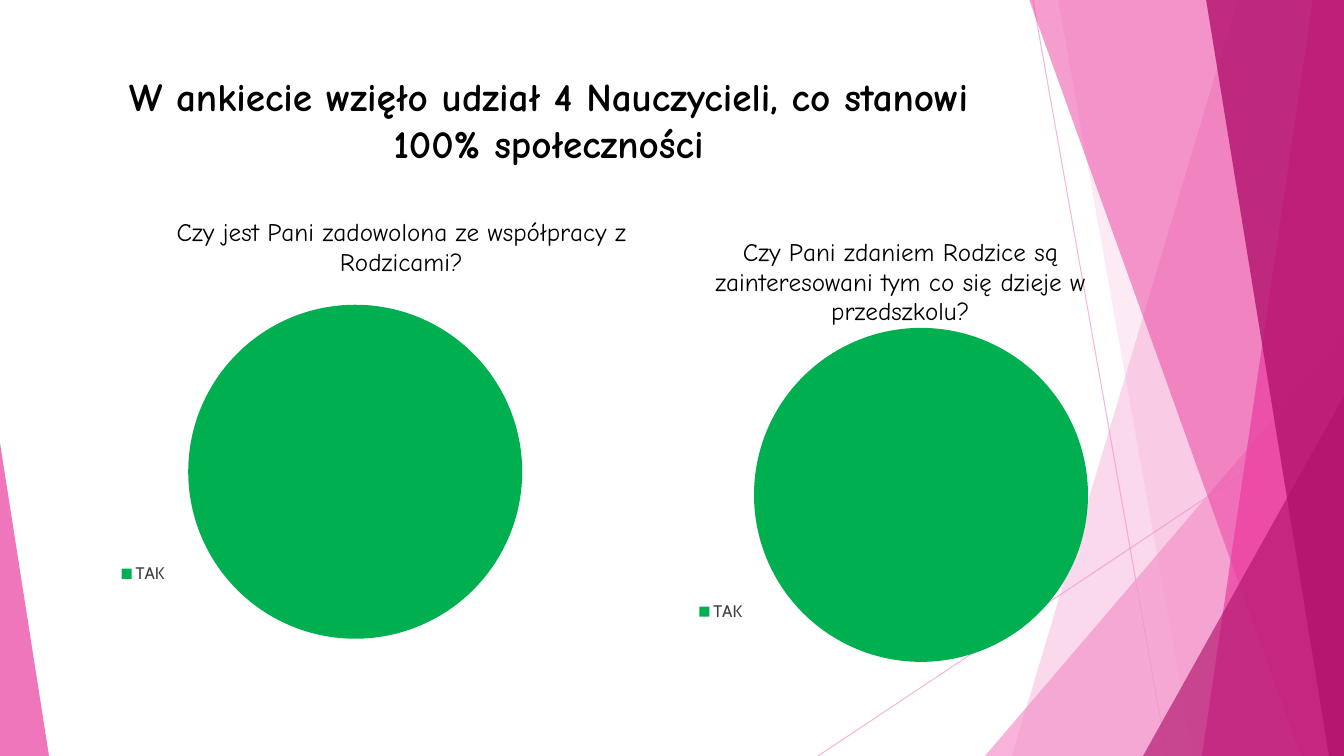
from lxml import etree
from pptx import Presentation
from pptx import util as u
from pptx.chart import data
from pptx.dml import color
from pptx.enum import chart as ch, shapes, text
from pptx.oxml import ns

WIDE, HIGH = 1344, 756
SCALE = 12192000 / WIDE
PINK, ROSE, PLUM, GREEN = "F496CB", "EB3D9F", "B2136D", "00B050"
HEAD = dict(name="Comic Neue", size=u.Pt(28), bold=True)
ASK = dict(name="Comic Neue", size=u.Pt(18), bold=False)
KEY = dict(name="Cabin", size=u.Pt(12), bold=False)


def px(*nums):
    return [u.Emu(round(n * SCALE)) for n in nums]


def rgb(code):
    return color.RGBColor.from_string(code)


def style(obj, vals):
    for name, val in vals.items():
        setattr(obj, name, val)


def ink(font, look, code):
    style(font, look)
    font.color.rgb = rgb(code)


def fade(fill, code, alpha):
    fill.solid()
    fill.fore_color.rgb = rgb(code)
    node = fill._xPr.find(".//" + ns.qn("a:srgbClr"))
    etree.SubElement(node, ns.qn("a:alpha"), val=str(alpha * 1000))


def paint(shape, code, alpha):
    shape.shadow.inherit = False
    fade(shape.fill, code, alpha)
    shape.line.fill.background()


# Decoration
def ray(slide, ends):
    line = slide.shapes.add_connector(shapes.MSO_CONNECTOR.STRAIGHT, *px(*ends))
    line.line.width = u.Pt(0.75)
    fade(line.line.fill, PINK, 70)
    etree.SubElement(line._element.spPr, ns.qn("a:effectLst"))


def band(slide, top, foot, code, alpha):
    """Fill from a slanted left edge to the right side of the slide."""
    form = slide.shapes.build_freeform(top, -1, scale=SCALE)
    form.add_line_segments([(WIDE, -1), (WIDE, HIGH), (foot, HIGH)], close=True)
    paint(form.convert_to_shape(), code, alpha)


def wedge(slide, left, top, width, tip, code, alpha):
    box = px(left, top, width, HIGH - top)
    shape = slide.shapes.add_shape(shapes.MSO_SHAPE.ISOSCELES_TRIANGLE, *box)
    shape.adjustments[0] = tip
    paint(shape, code, alpha)


def decor(slide):
    for ends in ((1033, 0, 1167, HIGH), (WIDE, 406, 818, HIGH)):
        ray(slide, ends)
    for draw, *args in (
        (band, 1238, 1012, PINK, 36),
        (band, 1058, 1193, PINK, 20),
        (wedge, 985, 336, 359, 1, PINK, 72),
        (band, 1029, 1301, ROSE, 50),
        (band, 1313, 1202, ROSE, 70),
        (band, 1206, 1329, PLUM, 80),
        (wedge, 1143, 396, 201, 1, PLUM, 66),
        (wedge, 0, 443, 49, 0, ROSE, 70),
    ):
        draw(slide, *args)


# Heading
def heading(slide, box, words):
    frame = slide.shapes.add_textbox(*px(*box)).text_frame
    style(frame, dict(word_wrap=True, vertical_anchor=text.MSO_ANCHOR.TOP))
    para = frame.paragraphs[0]
    para.alignment = text.PP_ALIGN.CENTER
    run = para.add_run()
    run.text = words
    ink(run.font, HEAD, "000000")


# Pie charts
def place(node, slot, spots):
    """Give a chart part a manual layout, as shares of the chart."""
    for old in node.findall(ns.qn("c:layout")):
        node.remove(old)
    lay = etree.Element(ns.qn("c:layout"))
    node.insert(slot, lay)
    man = etree.SubElement(lay, ns.qn("c:manualLayout"))
    if len(spots) == 4:
        etree.SubElement(man, ns.qn("c:layoutTarget"), val="inner")
    for tag in ("xMode", "yMode"):
        etree.SubElement(man, ns.qn("c:" + tag), val="edge")
    for tag, val in zip("xywh", spots):
        etree.SubElement(man, ns.qn("c:" + tag), val=str(round(val, 3)))


def pie(slide, box, words, ask, key):
    """ask and key are px offsets of title and legend within the box."""
    wide, high = box[2:]
    info = data.CategoryChartData()
    info.categories = ["TAK"]
    info.add_series("Series 1", [100])
    kind = ch.XL_CHART_TYPE.PIE
    chart = slide.shapes.add_chart(kind, *px(*box), info).chart
    ink(chart.font, dict(name="Cabin", size=u.Pt(10)), "000000")

    style(chart, dict(has_title=True, has_legend=True))
    para = chart.chart_title.text_frame.paragraphs[0]
    run = para.add_run()
    run.text = words
    ink(run.font, ASK, "000000")
    style(chart.legend, dict(position=ch.XL_LEGEND_POSITION.RIGHT, include_in_layout=False))
    ink(chart.legend.font, KEY, "404040")

    plot = chart.plots[0]
    plot.vary_by_categories = True
    fill = plot.series[0].points[0].format.fill
    fill.solid()
    fill.fore_color.rgb = rgb(GREEN)

    place(chart.chart_title._element, 1, (ask[0] / wide, ask[1] / high))
    place(chart.legend._element, 1, (key[0] / wide, key[1] / high))
    place(chart._chartSpace.chart.plotArea, 0, (0.03, 1 - 0.744 - ask[2] / high, 0.967, 0.744))


def main():
    deck = Presentation()
    style(deck, dict(zip(("slide_width", "slide_height"), px(WIDE, HIGH))))
    slide = deck.slides.add_slide(deck.slide_layouts[6])
    decor(slide)
    heading(slide, (75, 67, 947, 145),
            "W ankiecie wzięło udział 4 Nauczycieli, co stanowi 100% społeczności")
    pie(slide, (672, 213, 485, 449),
        "Czy Pani zdaniem Rodzice są zainteresowani tym co się dzieje w przedszkolu?",
        (39, 18, 0), (22, 385))
    pie(slide, (59, 193, 577, 449),
        "Czy jest Pani zadowolona ze współpracy z Rodzicami?",
        (113, 18, 3), (57, 367))
    deck.save("out.pptx")


if __name__ == "__main__":
    main()
